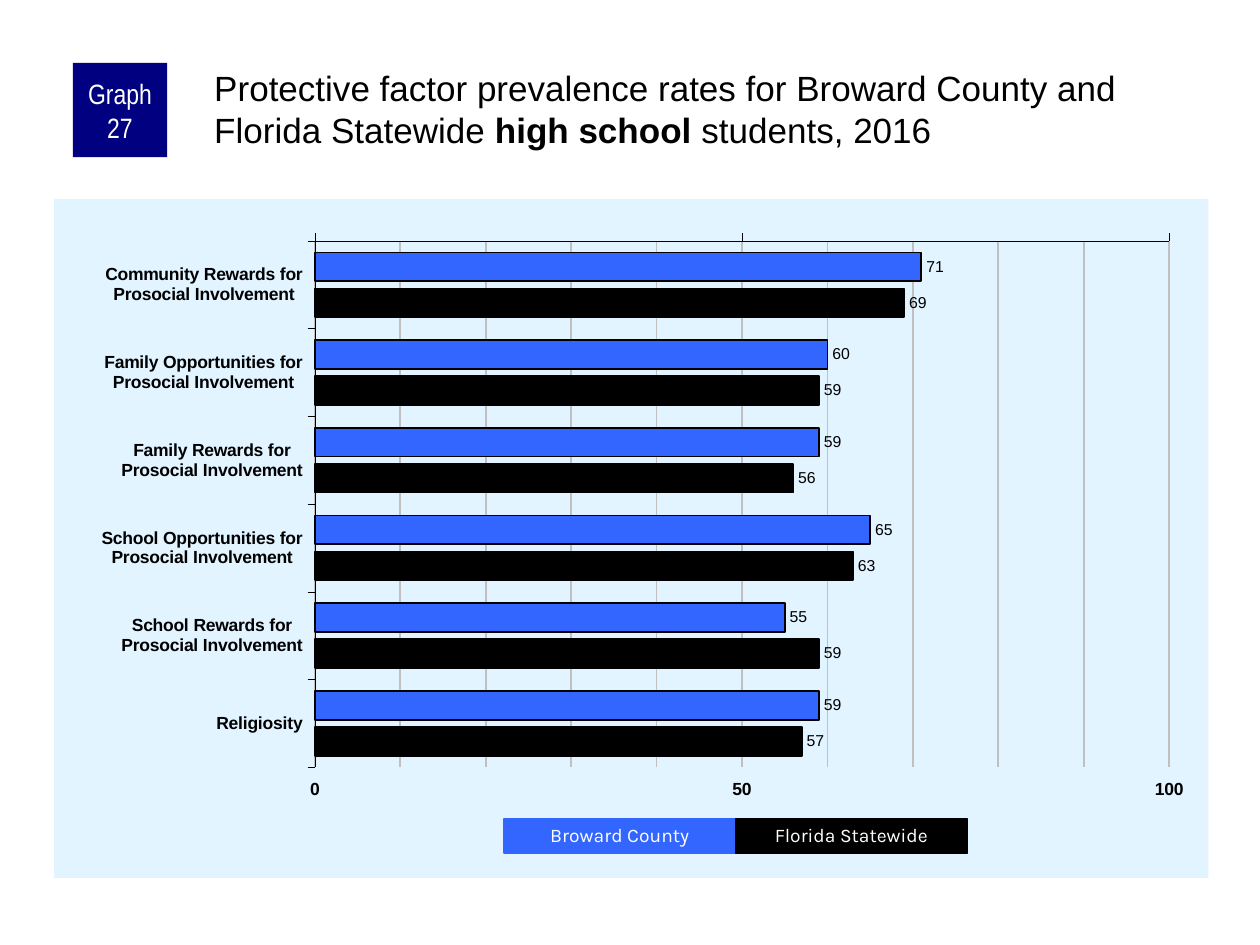
from copy import deepcopy

from lxml.etree import SubElement
from pptx import Presentation
from pptx.chart.data import CategoryChartData
from pptx.dml.color import RGBColor
from pptx.enum.chart import XL_CHART_TYPE, XL_LABEL_POSITION, XL_TICK_LABEL_POSITION, XL_TICK_MARK
from pptx.enum.shapes import MSO_SHAPE
from pptx.enum.text import MSO_ANCHOR, PP_ALIGN
from pptx.oxml.ns import qn
from pptx.util import Cm, Pt

BLACK = RGBColor(0x00, 0x00, 0x00)
WHITE = RGBColor(0xFF, 0xFF, 0xFF)
NAVY = RGBColor(0x00, 0x00, 0x80)
BLUE = RGBColor(0x33, 0x66, 0xFF)
PALE_BLUE = RGBColor(0xE1, 0xF4, 0xFF)
GREY = RGBColor(0xC0, 0xC0, 0xC0)

GRAPH_NUMBER = "Graph 27"
TITLE = [
    ("Protective factor prevalence rates for Broward County and Florida Statewide ", False),
    ("high school ", True),
    ("students, 2016", False),
]
FACTORS = [
    ("Community Rewards for\nProsocial Involvement", 71, 69),
    ("Family Opportunities for\nProsocial Involvement", 60, 59),
    ("Family Rewards for\nProsocial Involvement", 59, 56),
    ("School Opportunities for\nProsocial Involvement", 65, 63),
    ("School Rewards for\nProsocial Involvement", 55, 59),
    ("Religiosity", 59, 57),
]
REGIONS = [("Broward County", BLUE), ("Florida Statewide", BLACK)]
PLOT_LAYOUT = {"x": 0.226, "y": 0.062, "w": 0.74, "h": 0.775}
KEY_LEFT, KEY_TOP, KEY_WIDTH, KEY_HEIGHT = 10.16, 16.51, 4.67, 0.69


def set_font(font, name, size, color, bold=False):
    font.name = name
    font.size = Pt(size)
    font.color.rgb = color
    font.bold = bold


def set_line(line, color, width):
    line.color.rgb = color
    line.width = Pt(width)


def add_label(slide, text, box, fill, font_name, size):
    label = slide.shapes.add_shape(MSO_SHAPE.RECTANGLE, *map(Cm, box))
    label.shadow.inherit = False
    label.fill.solid()
    label.fill.fore_color.rgb = fill
    label.line.fill.background()
    frame = label.text_frame
    frame.word_wrap = True
    frame.vertical_anchor = MSO_ANCHOR.MIDDLE
    paragraph = frame.paragraphs[0]
    paragraph.text = text
    paragraph.alignment = PP_ALIGN.CENTER
    set_font(paragraph.font, font_name, size, WHITE)
    return label


def add_factor_chart(slide):
    rates = CategoryChartData()
    rates.categories = [factor[0] for factor in FACTORS]
    for column, (region, _) in enumerate(REGIONS, start=1):
        rates.add_series(region, [factor[column] for factor in FACTORS])
    chart = slide.shapes.add_chart(
        XL_CHART_TYPE.BAR_CLUSTERED, Cm(1.09), Cm(4.01), Cm(23.27), Cm(13.69), rates
    ).chart
    chart.has_legend = False
    chart.has_title = False
    set_font(chart.font, "Arial", 11.8, BLACK)

    for axis in (chart.category_axis, chart.value_axis):
        axis.major_tick_mark = XL_TICK_MARK.OUTSIDE
        axis.minor_tick_mark = XL_TICK_MARK.NONE
        set_font(axis.tick_labels.font, "Arial", 10, BLACK, True)
        set_line(axis.format.line, BLACK, 0.25)
    chart.category_axis.reverse_order = True
    scale = chart.value_axis
    scale.minimum_scale, scale.maximum_scale = 0, 100
    scale.major_unit, scale.minor_unit = 50, 10
    scale.tick_label_position = XL_TICK_LABEL_POSITION.HIGH
    scale.has_major_gridlines = scale.has_minor_gridlines = True
    set_line(scale.major_gridlines.format.line, GREY, 1)
    major_style = chart.element.find(".//" + qn("c:majorGridlines") + "/" + qn("c:spPr"))
    chart.element.find(".//" + qn("c:minorGridlines")).append(deepcopy(major_style))

    plot = chart.plots[0]
    plot.gap_width = 80
    plot.overlap = -25
    plot.vary_by_categories = False
    for series, (_, color) in zip(plot.series, REGIONS):
        series.format.fill.solid()
        series.format.fill.fore_color.rgb = color
        set_line(series.format.line, BLACK, 1)
        labels = series.data_labels
        labels.show_value = True
        labels.position = XL_LABEL_POSITION.OUTSIDE_END
        set_font(labels.font, "Arial", 9, BLACK)

    plot_area = chart.element.find(".//" + qn("c:plotArea"))
    layout = plot_area.find(qn("c:layout"))
    if layout is None:
        layout = SubElement(plot_area, qn("c:layout"))
        plot_area.insert(0, layout)
    manual = SubElement(layout, qn("c:manualLayout"))
    settings = {"layoutTarget": "inner", "xMode": "edge", "yMode": "edge", **PLOT_LAYOUT}
    for setting, value in settings.items():
        SubElement(manual, qn(f"c:{setting}")).set("val", str(value))

    background = chart.element.makeelement(qn("c:spPr"))
    chart.element.find(qn("c:chart")).addnext(background)
    fill = SubElement(background, qn("a:solidFill"))
    SubElement(fill, qn("a:srgbClr")).set("val", str(PALE_BLUE))
    SubElement(SubElement(background, qn("a:ln")), qn("a:noFill"))


def add_title(slide):
    title = slide.shapes.add_textbox(Cm(4.24), Cm(1.27), Cm(20.12), Cm(2.11)).text_frame
    title.word_wrap = True
    title.margin_left = title.margin_top = Cm(0.08)
    title.margin_right = title.margin_bottom = 0
    paragraph = title.paragraphs[0]
    set_font(paragraph.font, "Arial", 20, BLACK)
    for text, bold in TITLE:
        run = paragraph.add_run()
        run.text = text
        run.font.bold = bold


def main():
    presentation = Presentation()
    presentation.slide_width, presentation.slide_height = Cm(25.4), Cm(19.05)
    slide = presentation.slides.add_slide(presentation.slide_layouts[6])

    add_factor_chart(slide)
    number = add_label(slide, GRAPH_NUMBER, (1.47, 1.27, 1.9, 1.9), NAVY, "Arial Narrow", 16).text_frame
    number.margin_left = number.margin_right = Cm(0.13)
    number.margin_top = number.margin_bottom = 0
    add_title(slide)
    for index, (region, color) in enumerate(REGIONS):
        box = (KEY_LEFT + index * KEY_WIDTH, KEY_TOP, KEY_WIDTH, KEY_HEIGHT)
        key = add_label(slide, region, box, color, "Karla", 11)
        set_line(key.line, color, 0.75)
        key.text_frame.paragraphs[0].line_spacing = 0.9

    presentation.save("out.pptx")


if __name__ == "__main__":
    main()
